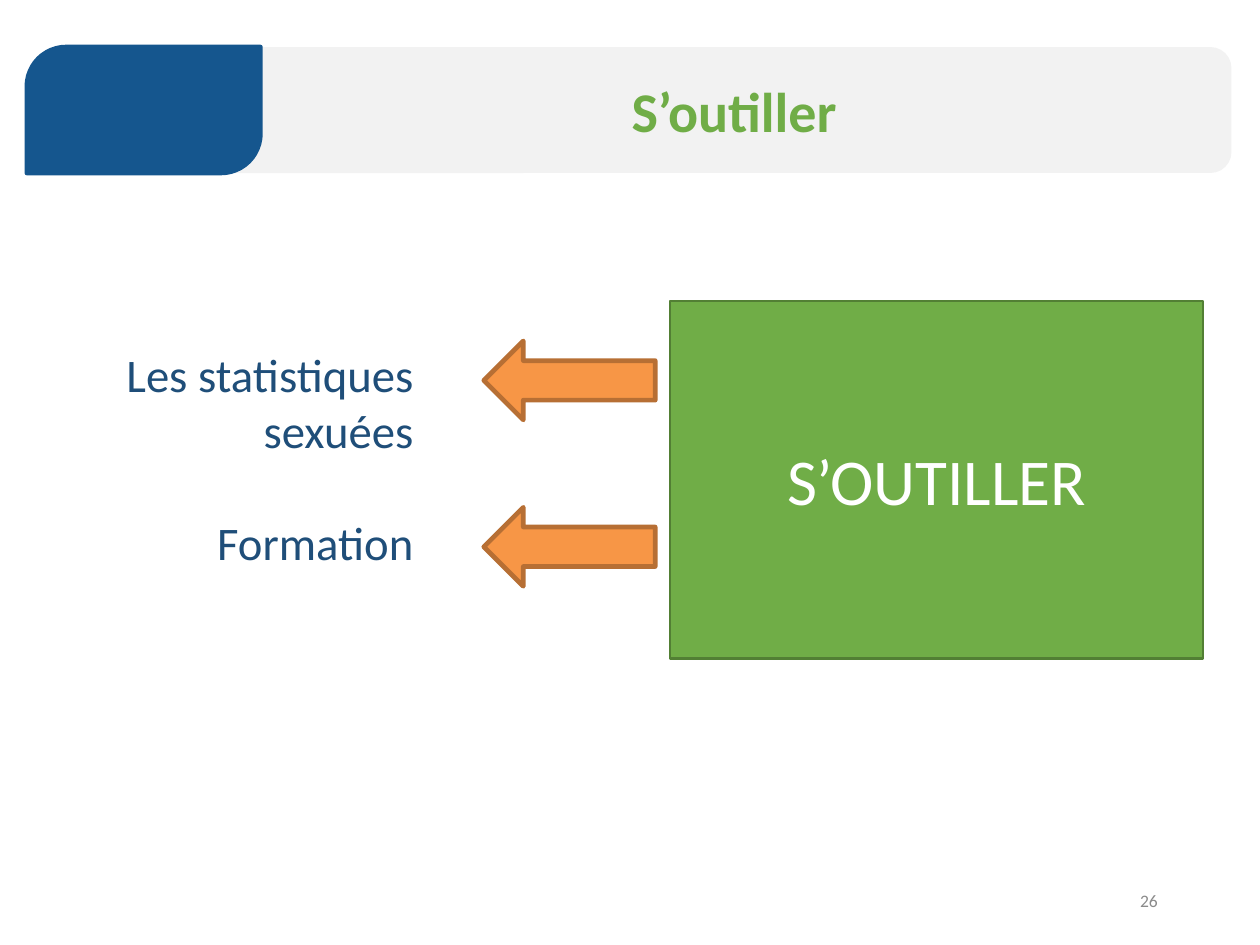
from pptx import Presentation
from pptx.dml.color import RGBColor
from pptx.enum.shapes import MSO_SHAPE
from pptx.enum.text import MSO_ANCHOR, PP_ALIGN
from pptx.util import Inches, Pt

GREY = RGBColor(0xF2, 0xF2, 0xF2)
BLUE = RGBColor(0x15, 0x56, 0x8E)
NAVY = RGBColor(0x1F, 0x4E, 0x79)
GREEN = RGBColor(0x70, 0xAD, 0x47)
DARK_GREEN = RGBColor(0x52, 0x7F, 0x34)
ORANGE = RGBColor(0xF7, 0x96, 0x46)
BROWN = RGBColor(0xB7, 0x6F, 0x34)
NUMBER_GREY = RGBColor(0x8B, 0x8B, 0x8B)
WHITE = RGBColor(0xFF, 0xFF, 0xFF)

# A 4:3 slide
prs = Presentation()
prs.slide_width = Inches(7.5)
prs.slide_height = prs.slide_width * 3 // 4
s = prs.slides.add_slide(prs.slide_layouts[6])


def add_shape(kind, box, fill, line=None, width=0, adj=()):
    sp = s.shapes.add_shape(kind, *map(Inches, box))
    sp.shadow.inherit = False
    sp.fill.solid()
    sp.fill.fore_color.rgb = fill
    if line is None:
        sp.line.fill.background()
    else:
        sp.line.color.rgb = line
        sp.line.width = Pt(width)
    for i, value in enumerate(adj):
        sp.adjustments[i] = value
    return sp


def write(sp, lines, size, color, align, anchor=MSO_ANCHOR.MIDDLE, bold=False, gap=0):
    tf = sp.text_frame
    tf.word_wrap = True
    tf.vertical_anchor = anchor
    for i, line in enumerate(lines):
        p = tf.add_paragraph() if i else tf.paragraphs[0]
        p.text = line
        p.alignment = align
        if i:
            p.space_before = Pt(gap)
        p.font.name, p.font.size, p.font.bold = "Calibri", Pt(size), bold
        p.font.color.rgb = color


# Title band
BAND_TOP, BAND_HEIGHT = 0.28, 0.75
add_shape(MSO_SHAPE.ROUNDED_RECTANGLE, (1.14, BAND_TOP, 6.19, BAND_HEIGHT), GREY, adj=(0.167,))
add_shape(MSO_SHAPE.ROUND_2_DIAG_RECTANGLE, (0.16, BAND_TOP, 1.39, BAND_HEIGHT),
          BLUE, BLUE, 2, (0.313, 0))
title = s.shapes.add_textbox(*map(Inches, (1.45, BAND_TOP, 5.84, BAND_HEIGHT)))
write(title, ["S’outiller"], 24, GREEN, PP_ALIGN.CENTER, bold=True)

# Slide number
number = s.shapes.add_textbox(*map(Inches, (5.3, 5.21, 1.69, 0.3)))
write(number, ["26"], 7.5, NUMBER_GREY, PP_ALIGN.RIGHT)

# Main box
main_box = add_shape(MSO_SHAPE.RECTANGLE, (3.99, 1.79, 3.17, 2.13), GREEN, DARK_GREEN, 1)
write(main_box, ["S’OUTILLER"], 28, WHITE, PP_ALIGN.CENTER)

# Arrows to the tools
for row in range(2):
    add_shape(MSO_SHAPE.LEFT_ARROW, (2.88, 2.03 + 0.99 * row, 1.02, 0.47),
              ORANGE, BROWN, 2, (0.5, 0.5))

# Tools, one empty line apart
tools = s.shapes.add_textbox(*map(Inches, (0.36, 2.01, 2.2, 1.43)))
write(tools, ["Les statistiques sexuées", "Formation"], 20, NAVY, PP_ALIGN.RIGHT,
      MSO_ANCHOR.TOP, gap=24)

prs.save("out.pptx")
